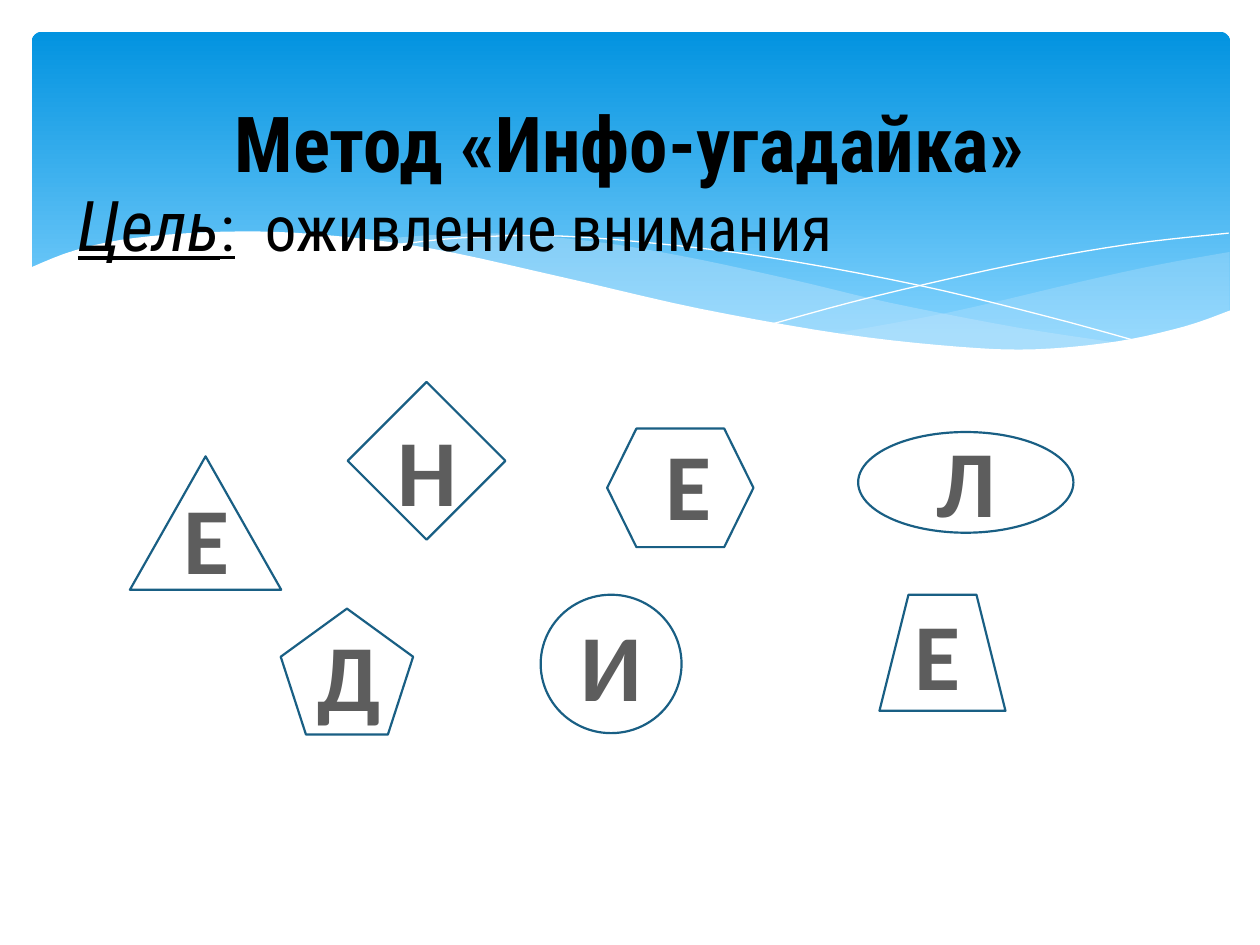
from lxml import etree
from pptx import Presentation
from pptx import util as u
from pptx.dml.color import RGBColor
from pptx.enum import shapes, text
from pptx.oxml.ns import qn

Cm, Pt = u.Cm, u.Pt
KIND = shapes.MSO_SHAPE

COLORS = {
    "sky": "0293E0",
    "haze": "83D3FE",
    "swell": "C6E7FC",
    "white": "FFFFFF",
    "black": "000000",
    "outline": "195F84",
    "letter": "5D5D5D",
}

# Curves of the banner, as key points in centimetres
WAVE_EDGE = [(0.58, 5.41), (1.5, 5.05), (2.69, 4.8), (4.5, 4.67), (6.35, 4.72),
             (8.64, 5), (11.35, 5.59), (14.1, 6.22), (16.97, 6.73), (19.33, 6.99),
             (20.9, 7.04), (22.53, 6.88), (23.88, 6.58), (24.82, 6.25)]
WAVE_BASE = [(24.82, 8.36), (0.58, 8.36)]
RIGHT_TOP = [(24.79, 5.08), (23.39, 5.33), (21.87, 5.66), (19.13, 6.3), (16.79, 6.73)]
RIGHT_BOTTOM = [(16.79, 6.73), (18.59, 6.96), (20.4, 7.06), (22.15, 6.96),
                (23.57, 6.68), (24.79, 6.27)]
MIDDLE_TOP = [(22.68, 6.93), (20.5, 6.6), (17.93, 6.1), (15.98, 5.64),
              (13.74, 5.16), (11.81, 4.85), (9.65, 4.7), (7.26, 4.85)]
MIDDLE_BOTTOM = [(7.26, 4.85), (9.19, 5.16), (11.4, 5.64), (14.38, 6.3),
                 (16.89, 6.76), (19, 7.01), (21.03, 7.06), (22.68, 6.93)]
FALLING_LINE = [(7.85, 4.95), (9.22, 4.8), (11, 4.75), (12.95, 4.88),
                (15.44, 5.18), (18.47, 5.74), (21.11, 6.38), (23.04, 6.91)]
RISING_LINE = [(15.57, 6.53), (17.65, 5.97), (20.47, 5.33), (22.73, 4.93), (24.77, 4.7)]

# Preset shape and its place: left, top, width, height
FIGURES = [
    (KIND.FLOWCHART_PREPARATION, 12.24, 8.64, 2.95, 2.39),
    (KIND.ISOSCELES_TRIANGLE, 2.62, 9.2, 3.05, 2.69),
    (KIND.TRAPEZOID, 17.73, 11.99, 2.54, 2.34),
    (KIND.REGULAR_PENTAGON, 5.66, 12.27, 2.67, 2.54),
    (KIND.DIAMOND, 7.01, 7.7, 3.18, 3.18),
    (KIND.OVAL, 10.9, 11.99, 2.84, 2.79),
    (KIND.OVAL, 17.3, 8.71, 4.34, 2.03),
]

# Letter and its box: left, top, width
LETTERS = [
    ("Д", 5.92, 12.32, 2.24),
    ("Е", 18.14, 11.89, 1.52),
    ("Е", 13.13, 8.46, 1.52),
    ("И", 11.4, 12.12, 1.83),
    ("Л", 18.62, 8.41, 1.7),
    ("Н", 7.72, 8.18, 1.78),
    ("Е", 3.02, 9.55, 2.29),
]


def color(name):
    return RGBColor.from_string(COLORS[name])


def smooth(points, steps=5):
    """Catmull-Rom curve through the points."""
    padded = [points[0], *points, points[-1]]
    curve = [points[0]]
    for a, b, c, d in zip(padded, padded[1:], padded[2:], padded[3:]):
        for step in range(1, steps + 1):
            t = step / steps
            curve.append(tuple(
                (2 * q + (r - p) * t + (2 * p - 5 * q + 4 * r - s) * t ** 2
                 + (3 * q - p - 3 * r + s) * t ** 3) / 2
                for p, q, r, s in zip(a, b, c, d)))
    return curve


def add_outline(page, points, close):
    corners = [(Cm(x), Cm(y)) for x, y in points]
    builder = page.shapes.build_freeform(*corners[0])
    builder.add_line_segments(corners[1:], close=close)
    shape = builder.convert_to_shape()
    shape.shadow.inherit = False
    return shape


def add_area(page, points, fill, opacity=100):
    area = add_outline(page, points, True)
    area.fill.solid()
    area.fill.fore_color.rgb = color(fill)
    area.line.fill.background()
    if opacity < 100:
        tint = area.fill._xPr.find(qn("a:solidFill"))[0]
        etree.SubElement(tint, qn("a:alpha")).set("val", str(opacity * 1000))


def add_curve(page, points):
    curve = add_outline(page, smooth(points), False)
    curve.fill.background()
    curve.line.color.rgb = color("white")
    curve.line.width = Pt(0)


def add_banner(page):
    banner = page.shapes.add_shape(KIND.ROUNDED_RECTANGLE, Cm(0.64), Cm(0.64), Cm(24.16), Cm(6.86))
    banner.adjustments[0] = 0.03
    banner.shadow.inherit = False
    banner.line.fill.background()
    banner.fill.gradient()
    banner.fill.gradient_angle = 270
    for stop, position, name in zip(banner.fill.gradient_stops, (0, 0.9), ("sky", "haze")):
        stop.position = position
        stop.color.rgb = color(name)


def add_figure(page, kind, left, top, width, height):
    figure = page.shapes.add_shape(kind, Cm(left), Cm(top), Cm(width), Cm(height))
    figure.shadow.inherit = False
    figure.fill.background()
    figure.line.color.rgb = color("outline")
    figure.line.width = Pt(1.25)


def add_text(page, left, top, width, height, font, name, wrap=True):
    box = page.shapes.add_textbox(Cm(left), Cm(top), Cm(width), Cm(height))
    box.text_frame.word_wrap = wrap
    para = box.text_frame.paragraphs[0]
    para.font.name = font
    para.font.color.rgb = color(name)
    return box.text_frame, para


def add_title(page):
    frame, para = add_text(page, 1.27, 0.94, 22.86, 3.48, "Roboto Condensed", "black")
    frame.vertical_anchor = text.MSO_ANCHOR.MIDDLE
    frame.margin_top = Cm(0.46)
    para.text = "Метод «Инфо-угадайка»"
    para.alignment = text.PP_ALIGN.CENTER
    para.font.size = Pt(44.1)
    para.font.bold = True


def add_goal(page):
    _, para = add_text(page, 1.32, 3.53, 20.57, 1.96, "Roboto Condensed", "black")
    for words, size, italic, underline in [("Цель", 40, True, True), (":", 36, False, True),
                                           (" ", 36, False, False),
                                           ("оживление внимания", 36, False, False)]:
        span = para.add_run()
        span.text = words
        span.font.size = Pt(size)
        span.font.italic = italic
        span.font.underline = underline
    # Widen the gap after the colon
    para.runs[2].font._element.set("spc", "900")


def add_letter(page, letter, left, top, width):
    _, para = add_text(page, left, top, width, 2.57, "Calibri", "letter", wrap=False)
    para.text = letter
    para.alignment = text.PP_ALIGN.CENTER
    para.font.size = Pt(54)
    para.font.bold = True


def main():
    deck = Presentation()
    deck.slide_width, deck.slide_height = Cm(25.4), Cm(19.05)
    page = deck.slides.add_slide(deck.slide_layouts[6])

    # Banner with waves
    add_banner(page)
    add_area(page, smooth(RIGHT_TOP) + smooth(RIGHT_BOTTOM), "swell", 29)
    add_area(page, smooth(MIDDLE_TOP) + smooth(MIDDLE_BOTTOM), "swell", 40)
    add_curve(page, FALLING_LINE)
    add_curve(page, RISING_LINE)
    add_area(page, smooth(WAVE_EDGE) + WAVE_BASE, "white")

    # Heading and goal
    add_goal(page)
    add_title(page)

    # Figures and their letters
    for figure in FIGURES:
        add_figure(page, *figure)
    for letter in LETTERS:
        add_letter(page, *letter)

    deck.save("out.pptx")


if __name__ == "__main__":
    main()
